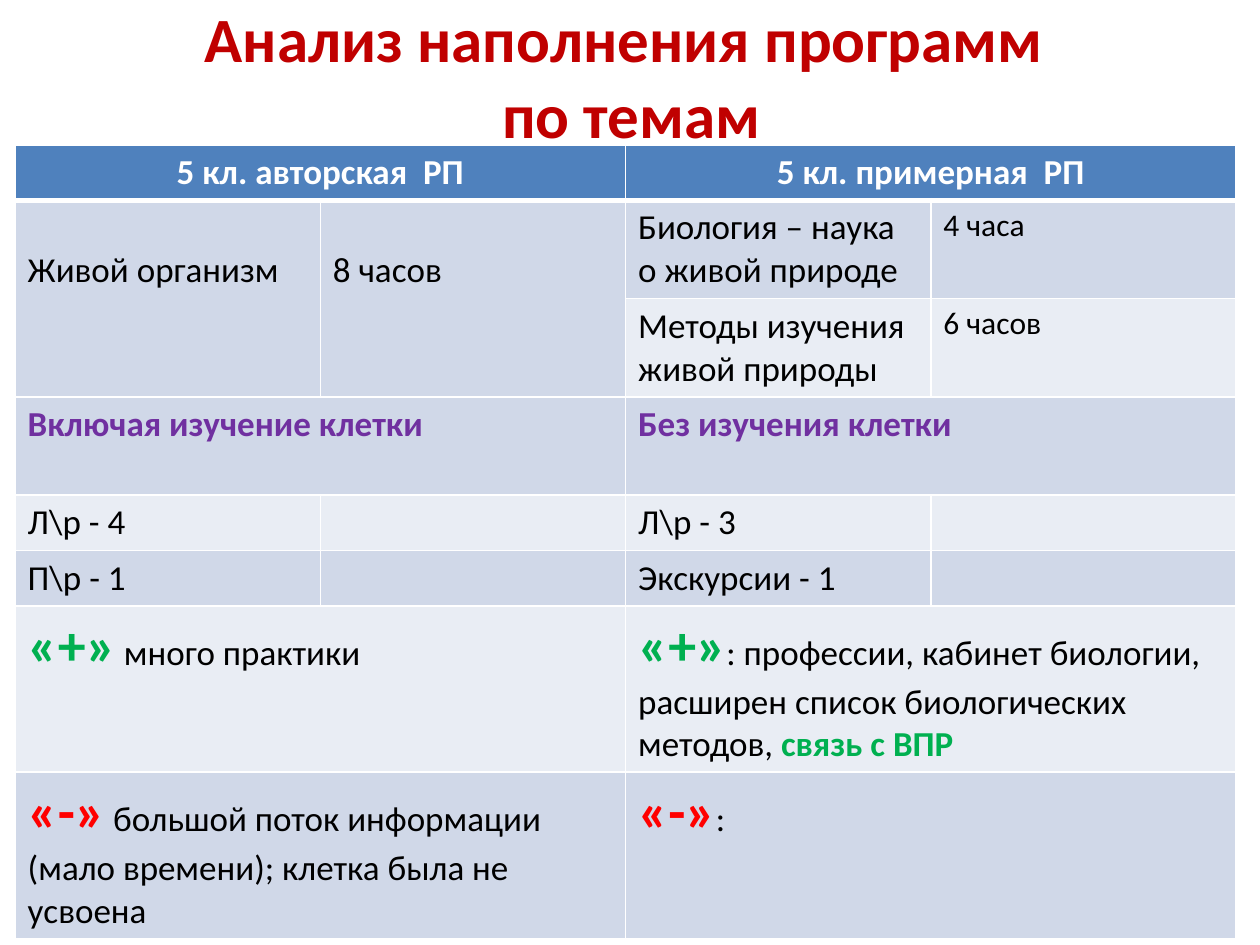
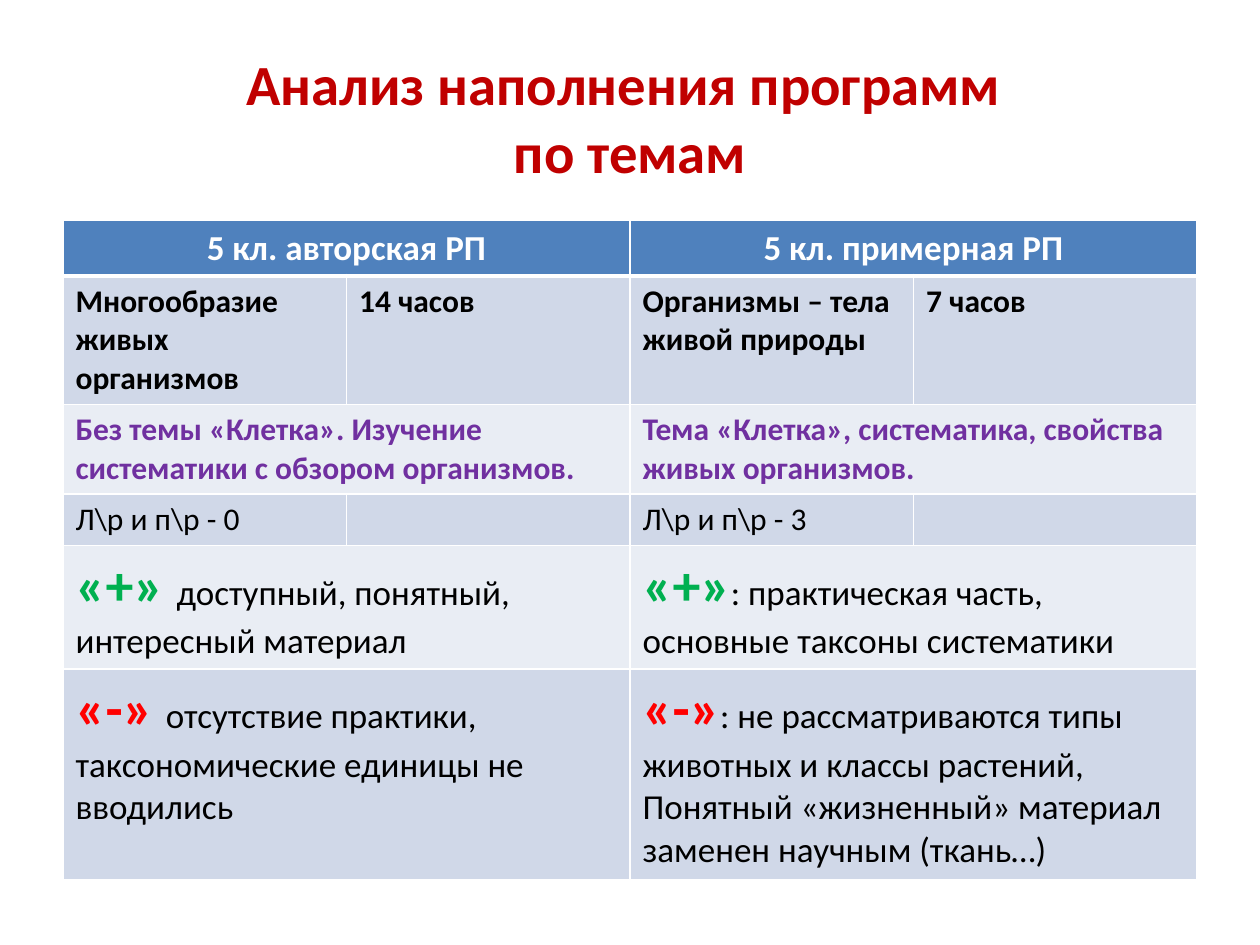
import pptx
import pptx.dml.color
import pptx.enum.text
import pptx.oxml
import pptx.oxml.ns
import pptx.util
from dataclasses import dataclass

Inches = pptx.util.Inches
FONT = "Calibri"
WHITE, BLACK = "FFFFFF", "000000"
TITLE_RED, PURPLE = "C00000", "7030A0"
GREEN, RED = "00B050", "FF0000"
HEADER_BLUE, BANDS = "4F81BD", ("E9EDF4", "D0D8E8")
TITLE = "Анализ наполнения программ \vпо темам"
CENTER = pptx.enum.text.PP_ALIGN.CENTER


@dataclass
class Span:
    words: str
    size: float = 20
    color: str = BLACK
    bold: bool = False


def rgb(value):
    return pptx.dml.color.RGBColor.from_string(value)


def header(words):
    return [[Span(words, 20, WHITE, True)]]


def plain(words, size=20):
    return [[Span(words, size)]]


def strong(words, size, color=BLACK):
    return [[Span(words, size, color, True)]]


def plus(words, sign="«+»"):
    return [Span(sign, 32, GREEN, True), Span(words)]


def minus(words, sign="«-»"):
    return [Span(sign, 32, RED, True), Span(words)]


def add_title(page, left, top, size):
    box = page.shapes.add_textbox(Inches(left), Inches(top), Inches(9), Inches(1.25))
    frame = box.text_frame
    frame.word_wrap = True
    frame.vertical_anchor = pptx.enum.text.MSO_ANCHOR.MIDDLE
    paragraph = frame.paragraphs[0]
    paragraph.text = TITLE
    paragraph.alignment = CENTER
    font = paragraph.font
    font.name, font.size, font.bold = FONT, pptx.util.Pt(size), True
    font.color.rgb = rgb(TITLE_RED)


def set_borders(cell, bottom_width):
    properties = cell._tc.get_or_add_tcPr()
    namespace = pptx.oxml.ns.nsdecls("a")
    for side, width in (("L", 1), ("R", 1), ("T", 1), ("B", bottom_width)):
        properties.append(pptx.oxml.parse_xml(
            f'<a:ln{side} {namespace} w="{pptx.util.Pt(width)}"><a:solidFill>'
            f'<a:srgbClr val="{WHITE}"/></a:solidFill></a:ln{side}>'))


def style_cell(cell, row_index):
    is_header = row_index == 0
    set_borders(cell, 3 if is_header else 1)
    cell.fill.solid()
    cell.fill.fore_color.rgb = rgb(HEADER_BLUE if is_header else BANDS[row_index % 2])


def write_cell(cell, lines, alignment):
    frame = cell.text_frame
    for index, spans in enumerate(lines):
        paragraph = frame.add_paragraph() if index else frame.paragraphs[0]
        paragraph.alignment = alignment
        paragraph.font.name = FONT
        for span in spans:
            run = paragraph.add_run()
            run.text = span.words
            run.font.name = FONT
            run.font.size = pptx.util.Pt(span.size)
            run.font.bold = span.bold
            run.font.color.rgb = rgb(span.color)


def add_comparison(page, left, top, width, rows):
    height = sum(row_height for row_height, _ in rows)
    frame = page.shapes.add_table(
        len(rows), 4, Inches(left), Inches(top), Inches(width), Inches(height))
    table = frame.table
    for column in table.columns:
        column.width = Inches(width / 4)
    for row_index, (row_height, contents) in enumerate(rows):
        table.rows[row_index].height = Inches(row_height)
        for column_index in range(4):
            style_cell(table.cell(row_index, column_index), row_index)
        step = 4 // len(contents)
        for index, lines in enumerate(contents):
            cell = table.cell(row_index, index * step)
            if step == 2:
                cell.merge(table.cell(row_index, index * step + 1))
            write_cell(cell, lines, CENTER if row_index == 0 else None)
    return table


def build_first_topic(page):
    add_title(page, 0.51, -0.03, 36)
    table = add_comparison(page, 0.12, 1.15, 9.69, [
        (0.44, [header("5 кл. авторская  РП"), header("5 кл. примерная  РП")]),
        (0.78, [plain("Живой организм"), plain("8 часов"),
                plain("Биология – наука о живой природе"), plain("4 часа", 18)]),
        (0.78, [[], [], plain("Методы изучения живой природы"), plain("6 часов", 18)]),
        (0.78, [strong("Включая изучение клетки", 20, PURPLE),
                strong("Без изучения клетки", 20, PURPLE)]),
        (0.44, [plain("Л\\р - 4"), [], plain("Л\\р - 3"), []]),
        (0.44, [plain("П\\р - 1"), [], plain("Экскурсии - 1"), []]),
        (1.32, [[plus(" много практики")],
                [plus(": профессии, кабинет биологии, расширен список "
                      "биологических методов, ")
                 + [Span("связь с ВПР", 20, GREEN, True)]]]),
        (1.32, [[minus(" большой поток информации (мало времени); "
                       "клетка была не усвоена")],
                [minus(":")]]),
    ])
    for column_index in range(2):
        topic = table.cell(1, column_index)
        topic.merge(table.cell(2, column_index))
        topic.margin_top = Inches(0.39)


def build_second_topic(page):
    add_title(page, 0.5, 0.3, 32.4)
    add_comparison(page, 0.5, 1.75, 9, [
        (0.44, [header("5 кл. авторская РП"), header("5 кл. примерная РП")]),
        (1.02, [strong("Многообразие живых организмов", 18), strong("14 часов", 18),
                strong("Организмы – тела живой природы", 18), strong("7 часов", 18)]),
        (0.71, [strong("Без темы «Клетка». Изучение систематики с обзором организмов.",
                       18, PURPLE),
                strong("Тема «Клетка», систематика, свойства живых организмов.",
                       18, PURPLE)]),
        (0.41, [plain("Л\\р и п\\р - 0", 18), [], plain("Л\\р и п\\р - 3", 18), []]),
        (0.98, [[plus("доступный, понятный, интересный материал", "«+» ")],
                [plus(": практическая часть, основные таксоны систематики")]]),
        (1.67, [[minus("отсутствие практики,", "«-» "),
                 [Span("таксономические единицы не вводились")]],
                [minus(": не рассматриваются типы животных и классы растений,"),
                 [Span("Понятный «жизненный» материал заменен научным (ткань…)")]]]),
    ])


def main():
    deck = pptx.Presentation()
    deck.slide_width, deck.slide_height = Inches(10), Inches(7.5)
    for build in (build_first_topic, build_second_topic):
        build(deck.slides.add_slide(deck.slide_layouts[6]))
    deck.save("out.pptx")


if __name__ == "__main__":
    main()
